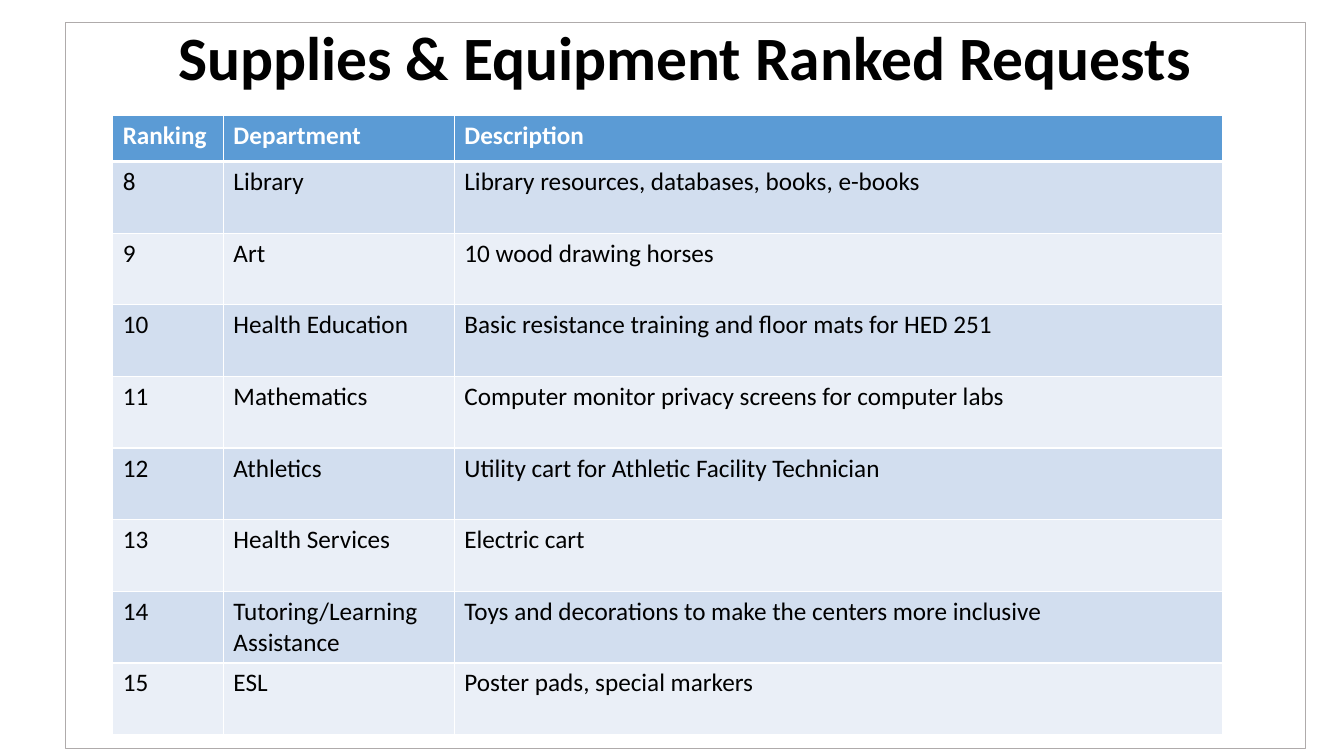
import pptx
import pptx.dml.color
import pptx.enum.text
import pptx.oxml
import pptx.oxml.ns
import pptx.util
from dataclasses import dataclass

Cm = pptx.util.Cm
Pt = pptx.util.Pt


@dataclass(frozen=True)
class Theme:
    font: str = "Calibri"
    title_size: int = 44
    table_size: int = 18
    ink: str = "000000"
    white: str = "FFFFFF"
    frame: str = "AFABAB"
    header: str = "5B9BD5"
    bands: tuple = ("D2DEEF", "EAEFF7")


THEME = Theme()
TITLE = "Supplies & Equipment Ranked Requests"
HEADINGS = ("Ranking", "Department", "Description")
FIRST_RANK = 8
REQUESTS = (
    ("Library", "Library resources, databases, books, e-books"),
    ("Art", "10 wood drawing horses"),
    ("Health Education", "Basic resistance training and floor mats for HED 251"),
    ("Mathematics", "Computer monitor privacy screens for computer labs"),
    ("Athletics", "Utility cart for Athletic Facility Technician"),
    ("Health Services", "Electric cart"),
    ("Tutoring/Learning Assistance",
     "Toys and decorations to make the centers more inclusive"),
    ("ESL", "Poster pads, special markers"),
)


def rgb(value):
    return pptx.dml.color.RGBColor.from_string(value)


def write(frame, text, size=THEME.table_size, color=THEME.ink, bold=False):
    """Put one formatted paragraph in a text frame and return it."""
    para = frame.paragraphs[0]
    span = para.add_run()
    span.text = text
    span.font.name = THEME.font
    span.font.size = Pt(size)
    span.font.bold = bold
    span.font.color.rgb = rgb(color)
    return para


def set_borders(cell, bottom=1, top=1):
    """Draw white cell borders, with widths in points."""
    properties = cell._tc.get_or_add_tcPr()
    for side, width in (("L", 1), ("R", 1), ("T", top), ("B", bottom)):
        properties.append(pptx.oxml.parse_xml(
            f'<a:ln{side} {pptx.oxml.ns.nsdecls("a")} w="{Pt(width)}">'
            f'<a:solidFill><a:srgbClr val="{THEME.white}"/></a:solidFill>'
            f'</a:ln{side}>'))


def add_framed_title(page, text, left, top, width, height):
    box = page.shapes.title
    box.left, box.top, box.width, box.height = left, top, width, height
    box.line.color.rgb = rgb(THEME.frame)
    box.line.width = Pt(0.75)
    frame = box.text_frame
    frame.word_wrap = True
    frame.auto_size = pptx.enum.text.MSO_AUTO_SIZE.NONE
    frame.vertical_anchor = pptx.enum.text.MSO_ANCHOR.TOP
    para = write(frame, text, size=THEME.title_size, bold=True)
    para.alignment = pptx.enum.text.PP_ALIGN.CENTER
    para.line_spacing = 0.9
    para.space_before = Pt(10)


def add_request_table(page, left, top, width, height):
    rows = [HEADINGS] + [(str(rank), *request)
                         for rank, request in enumerate(REQUESTS, FIRST_RANK)]
    table = page.shapes.add_table(
        len(rows), len(HEADINGS), left, top, width, height).table
    table.first_row = True
    table.horz_banding = False

    # Column widths: the description takes what is left
    narrow = (Cm(2.79), Cm(5.82))
    for column, size in zip(table.columns, (*narrow, width - sum(narrow))):
        column.width = size

    # Header height, then equal rows
    header_height = Cm(1.17)
    row_height = (height - header_height) // len(REQUESTS)
    for index, values in enumerate(rows):
        is_header = index == 0
        table.rows[index].height = header_height if is_header else row_height
        fill = THEME.header if is_header else THEME.bands[(index - 1) % 2]
        for cell, text in zip(table.rows[index].cells, values):
            set_borders(cell, bottom=3 if is_header else 1,
                        top=3 if index == 1 else 1)
            cell.fill.solid()
            cell.fill.fore_color.rgb = rgb(fill)
            write(cell.text_frame, text, bold=is_header,
                  color=THEME.white if is_header else THEME.ink)


def main():
    deck = pptx.Presentation()
    deck.slide_width, deck.slide_height = Cm(33.87), Cm(19.05)
    page = deck.slides.add_slide(deck.slide_layouts.get_by_name("Title Only"))
    add_framed_title(page, TITLE, Cm(1.65), Cm(0.56), Cm(31.24), Cm(18.31))
    add_request_table(page, Cm(2.84), Cm(2.9), Cm(27.96), Cm(15.61))
    deck.save("out.pptx")


if __name__ == "__main__":
    main()
